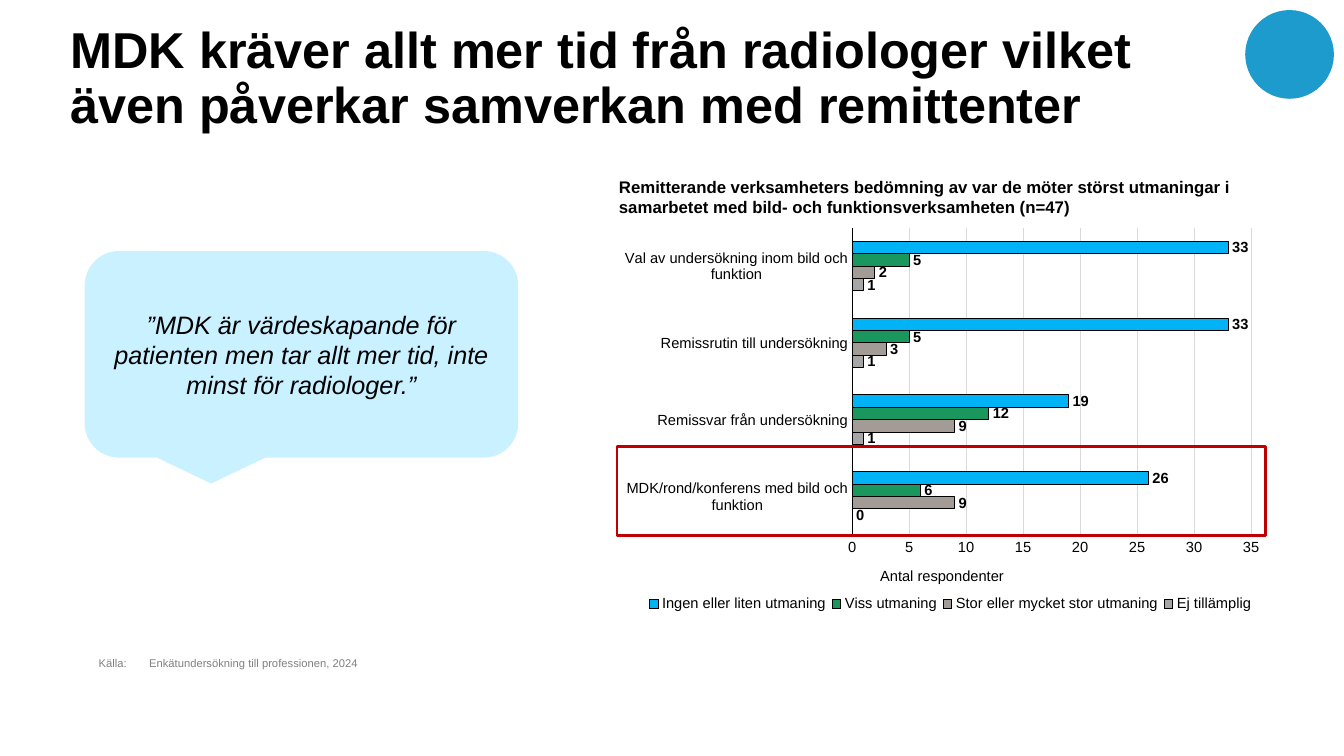
"""Build the slide on how conferences take up radiologists' time."""
from dataclasses import dataclass

from lxml import etree
from pptx import Presentation
from pptx import util as u
from pptx.chart import data as chart_data
from pptx.dml.color import RGBColor
from pptx.enum import chart as charts, shapes, text
from pptx.oxml import parse_xml
from pptx.oxml.ns import nsdecls, qn

SCALE = 9144
FONT = "Arial"
BLACK = RGBColor(0x00, 0x00, 0x00)
GREY = RGBColor(0x80, 0x80, 0x80)
GRID = RGBColor(0xD9, 0xD9, 0xD9)
RED = RGBColor(0xC0, 0x00, 0x00)
DISC = RGBColor(0x1D, 0x9B, 0xCD)
PALE_BLUE = RGBColor(0xCA, 0xF1, 0xFF)
CHART_SIZE = 10.5

CATEGORIES = (
    "MDK/rond/konferens med bild och funktion",
    "Remissvar från undersökning",
    "Remissrutin till undersökning",
    "Val av undersökning inom bild och funktion",
)


@dataclass(frozen=True)
class Area:
    """A rectangle on the page, in px."""
    left: int
    top: int
    width: int
    height: int

    def emu(self) -> list[u.Emu]:
        """Return the rectangle in EMU."""
        return [u.Emu(side * SCALE) for side in (self.left, self.top, self.width, self.height)]


@dataclass(frozen=True)
class Words:
    """A paragraph with its look."""
    wording: str
    size: int
    bold: bool = False
    italic: bool = False
    color: RGBColor = BLACK
    align: text.PP_ALIGN = text.PP_ALIGN.LEFT
    anchor: text.MSO_ANCHOR = text.MSO_ANCHOR.TOP
    spacing: float = 1.0
    tab: int = 0


@dataclass(frozen=True)
class Figure:
    """A preset shape with its fill, line and words."""
    kind: shapes.MSO_SHAPE
    area: Area
    fill: RGBColor | None = None
    line: RGBColor | None = None
    words: Words | None = None


@dataclass(frozen=True)
class Answer:
    """A chart series with its colour."""
    name: str
    values: tuple[int, ...]
    color: RGBColor


ANSWERS = (
    Answer("Ej tillämplig", (0, 1, 1, 1), RGBColor(0xA6, 0xA6, 0xA6)),
    Answer("Stor eller mycket stor utmaning", (9, 9, 3, 2), RGBColor(0xA2, 0x9B, 0x96)),
    Answer("Viss utmaning", (6, 12, 5, 5), RGBColor(0x19, 0x97, 0x5D)),
    Answer("Ingen eller liten utmaning", (26, 19, 33, 33), RGBColor(0x00, 0xB3, 0xF6)),
)

TEXTS = (
    (Area(60, 28, 1135, 102), Words(
        "MDK kräver allt mer tid från radiologer vilket även påverkar samverkan med remittenter",
        36, bold=True, anchor=text.MSO_ANCHOR.MIDDLE, spacing=0.9)),
    (Area(88, 646, 418, 24), Words(
        "Källa:\tEnkätundersökning till professionen, 2024", 8, color=GREY, tab=50)),
    (Area(604, 170, 645, 50), Words(
        "Remitterande verksamheters bedömning av var de möter störst utmaningar i "
        "samarbetet med bild- och funktionsverksamheten (n=47)", 12, bold=True)),
)

QUOTE = Words(
    "”MDK är värdeskapande för patienten men tar allt mer tid, inte minst för radiologer.”",
    18, italic=True, align=text.PP_ALIGN.CENTER, anchor=text.MSO_ANCHOR.MIDDLE)

FIGURES = (
    Figure(shapes.MSO_SHAPE.OVAL, Area(1235, 10, 88, 88), fill=DISC),
    Figure(shapes.MSO_SHAPE.RECTANGLE, Area(612, 443, 643, 88), line=RED),
    Figure(shapes.MSO_SHAPE.ROUNDED_RECTANGULAR_CALLOUT, Area(84, 249, 430, 205),
           fill=PALE_BLUE, words=QUOTE),
)


def set_font(font, size: float, color: RGBColor = BLACK, bold: bool = False,
             italic: bool = False) -> None:
    """Set the look of a font."""
    font.name, font.size, font.bold, font.italic = FONT, u.Pt(size), bold, italic
    font.color.rgb = color


def write(frame, words: Words) -> None:
    """Write one paragraph into a text frame."""
    frame.word_wrap = True
    frame.vertical_anchor = words.anchor
    para = frame.paragraphs[0]
    para.alignment = words.align
    para.line_spacing = words.spacing
    if words.tab:
        tabs = etree.SubElement(para._p.get_or_add_pPr(), qn("a:tabLst"))
        etree.SubElement(tabs, qn("a:tab"), pos=str(words.tab * SCALE), algn="l")
    span = para.add_run()
    span.text = words.wording
    set_font(span.font, words.size, words.color, words.bold, words.italic)


def set_line(line, color: RGBColor, width: float = 0.75) -> None:
    """Set the colour and width of a line."""
    line.color.rgb = color
    line.width = u.Pt(width)


def draw_figure(page, figure: Figure) -> None:
    """Draw a preset shape."""
    shape = page.shapes.add_shape(figure.kind, *figure.area.emu())
    shape.shadow.inherit = False
    if figure.fill is None:
        shape.fill.background()
    else:
        shape.fill.solid()
        shape.fill.fore_color.rgb = figure.fill
    if figure.line is None:
        shape.line.fill.background()
    else:
        set_line(shape.line, figure.line, 2)
    if figure.words:
        write(shape.text_frame, figure.words)


def place_layout(parent, before: str, inner: bool = False, **places: float) -> None:
    """Lay a chart part out by fractions, ahead of the named element."""
    for old in parent.findall(qn("c:layout")):
        parent.remove(old)
    target = '<c:layoutTarget val="inner"/>' if inner else ""
    modes = '<c:xMode val="edge"/><c:yMode val="edge"/>'
    sides = "".join(f'<c:{name} val="{place}"/>' for name, place in places.items())
    layout = parse_xml(f"<c:layout {nsdecls('c')}><c:manualLayout>{target}{modes}{sides}"
                       "</c:manualLayout></c:layout>")
    parent.find(qn(before)).addprevious(layout)


def style_axes(chart) -> None:
    """Style both axes, the grid and the axis title."""
    for axis in (chart.category_axis, chart.value_axis):
        axis.major_tick_mark = axis.minor_tick_mark = charts.XL_TICK_MARK.NONE
        set_font(axis.tick_labels.font, CHART_SIZE)
        set_line(axis.format.line, BLACK)
    axis = chart.value_axis
    axis.minimum_scale, axis.maximum_scale, axis.major_unit = 0, 35, 5
    set_line(axis.major_gridlines.format.line, GRID)
    span = axis.axis_title.text_frame.paragraphs[0].add_run()
    span.text = "Antal respondenter"
    set_font(span.font, CHART_SIZE)
    place_layout(axis.axis_title._element, "c:overlay", x=0.4, y=0.85)


def draw_chart(page, area: Area) -> None:
    """Draw the clustered bars of the answers."""
    numbers = chart_data.CategoryChartData()
    numbers.categories = CATEGORIES
    for answer in ANSWERS:
        numbers.add_series(answer.name, answer.values)
    chart = page.shapes.add_chart(
        charts.XL_CHART_TYPE.BAR_CLUSTERED, *area.emu(), numbers).chart
    set_font(chart.font, CHART_SIZE)
    chart.has_title = False
    chart.has_legend = True
    chart.legend.position = charts.XL_LEGEND_POSITION.BOTTOM
    chart.legend.include_in_layout = False
    set_font(chart.legend.font, CHART_SIZE)
    place_layout(chart.legend._element, "c:overlay", x=0.03, y=0.91, w=0.97, h=0.08)
    plot = chart.plots[0]
    plot.gap_width, plot.overlap, plot.vary_by_categories = 219, 0, False
    for series, answer in zip(plot.series, ANSWERS):
        series.format.fill.solid()
        series.format.fill.fore_color.rgb = answer.color
        set_line(series.format.line, BLACK)
        labels = series.data_labels
        labels.show_value = True
        labels.position = charts.XL_LABEL_POSITION.OUTSIDE_END
        set_font(labels.font, CHART_SIZE, bold=True)
    style_axes(chart)
    place_layout(chart._chartSpace.chart.plotArea, "c:barChart", inner=True,
                 x=0.36, y=0.02, w=0.63, h=0.76)


def main() -> None:
    """Build and save the deck."""
    deck = Presentation()
    deck.slide_width, deck.slide_height = u.Emu(1333 * SCALE), u.Emu(750 * SCALE)
    page = deck.slides.add_slide(deck.slide_layouts[6])
    draw_chart(page, Area(619, 218, 630, 401))
    for area, words in TEXTS:
        write(page.shapes.add_textbox(*area.emu()).text_frame, words)
    for figure in FIGURES:
        draw_figure(page, figure)
    deck.save("out.pptx")


if __name__ == "__main__":
    main()
